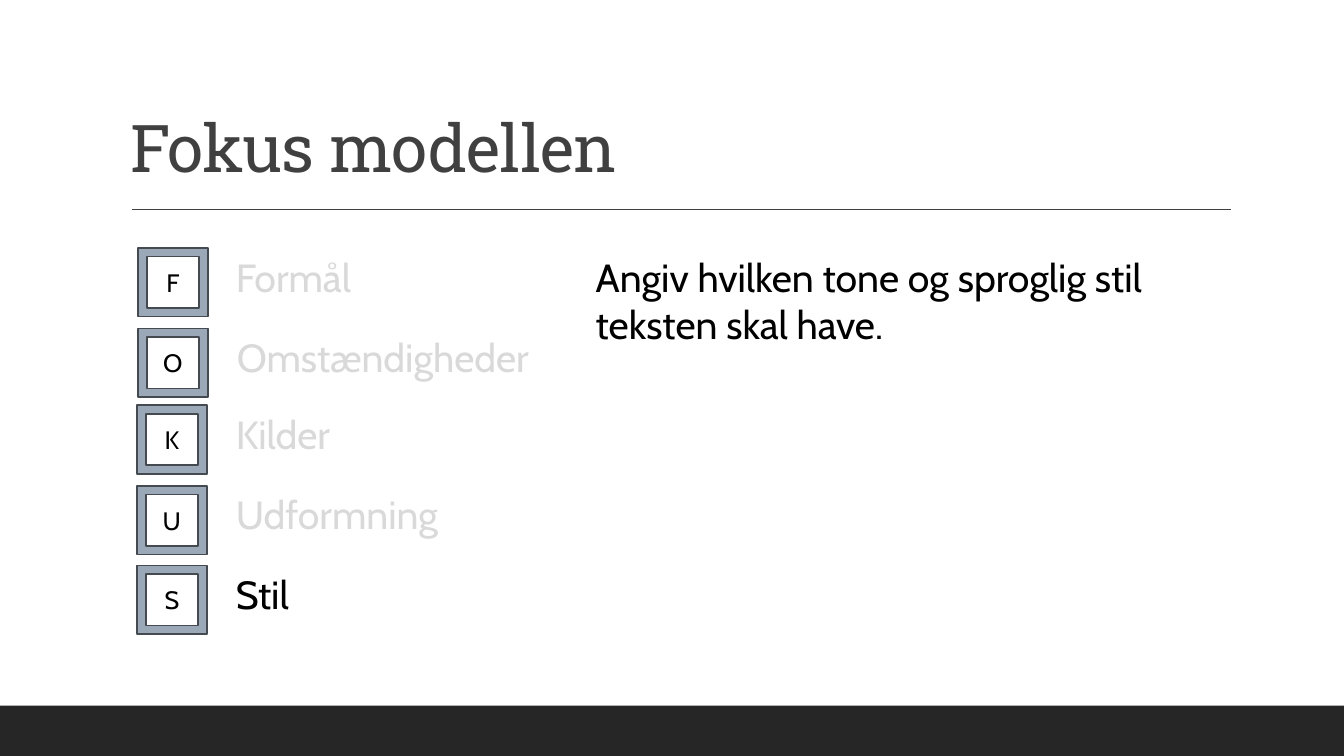
from pptx import Presentation
from pptx.dml.color import RGBColor
from pptx.enum.shapes import MSO_CONNECTOR as Conn, MSO_SHAPE as Form
from pptx.enum.text import MSO_ANCHOR as Anchor, MSO_AUTO_SIZE as Fit, PP_ALIGN as Align
from pptx.oxml.ns import qn
from pptx.util import Inches, Pt

TITLE = "Fokus modellen"
BODY = "Angiv hvilken tone og sproglig stil teksten skal have."
# word, left and top of its key, left of its label
STEPS = [
    ("Formål", 1.37, 2.46, 2.24),
    ("Omstændigheder", 1.37, 3.26, 2.25),
    ("Kilder", 1.36, 4.02, 2.24),
    ("Udformning", 1.36, 4.82, 2.24),
    ("Stil", 1.36, 5.61, 2.24),
]
ACTIVE = "Stil"
LABEL_END = 5.4
BLACK, PALE, DARK = "000000", "D9D9D9", "404040"


def paint(target, color):
    target.solid()
    target.fore_color.rgb = RGBColor.from_string(color)


def write(shape, text, size=28, color=BLACK, font="Cabin", align=Align.LEFT,
          anchor=Anchor.TOP, fit=Fit.NONE, spacing=None, track=None):
    frame = shape.text_frame
    frame.word_wrap = True
    frame.auto_size = fit
    frame.vertical_anchor = anchor
    para = frame.paragraphs[0]
    para.alignment = align
    para.line_spacing = spacing
    run = para.add_run()
    run.text = text
    run.font.size = Pt(size)
    run.font.name = font
    paint(run.font.fill, color)
    if track is not None:
        run.font._element.set("spc", str(round(track * 100)))


def add_text(left, top, width, height, text, **style):
    box = slide.shapes.add_textbox(*map(Inches, (left, top, width, height)))
    write(box, text, **style)


def add_form(form, left, top, width, height, fill, edge=None):
    shape = slide.shapes.add_shape(form, *map(Inches, (left, top, width, height)))
    shape.shadow.inherit = False
    paint(shape.fill, fill)
    if edge:
        paint(shape.line.fill, edge)
        shape.line.width = Pt(1.25)
    else:
        shape.line.fill.background()
    return shape


deck = Presentation()
deck.slide_width, deck.slide_height = Inches(13.33), Inches(7.5)
slide = deck.slides.add_slide(deck.slide_layouts[6])

add_form(Form.RECTANGLE, 0, 7, 13.33, 0.5, "262626")
rule = slide.shapes.add_connector(
    Conn.STRAIGHT, *map(Inches, (1.31, 2.08, 12.21, 2.08)))
paint(rule.line.fill, DARK)
rule.line.width = Pt(1)
props = rule._element.spPr
props.append(props.makeelement(qn("a:effectLst"), {}))

add_text(1.2, 0.31, 11, 1.59, TITLE, size=47, color=DARK, font="Roboto Slab",
         anchor=Anchor.BOTTOM, spacing=0.9, track=-0.5)

for word, left, top, start in STEPS:
    key = add_form(Form.FRAME, left, top, 0.69, 0.68, "9BA8B7", "444A50")
    write(key, word[0], size=18, align=Align.CENTER, anchor=Anchor.MIDDLE)
    add_text(start, top, LABEL_END - start, 0.57, word, fit=Fit.SHAPE_TO_FIT_TEXT,
             color=BLACK if word == ACTIVE else PALE)

add_text(5.81, 2.46, 6.68, 1.04, BODY, fit=Fit.SHAPE_TO_FIT_TEXT)

deck.save("out.pptx")
